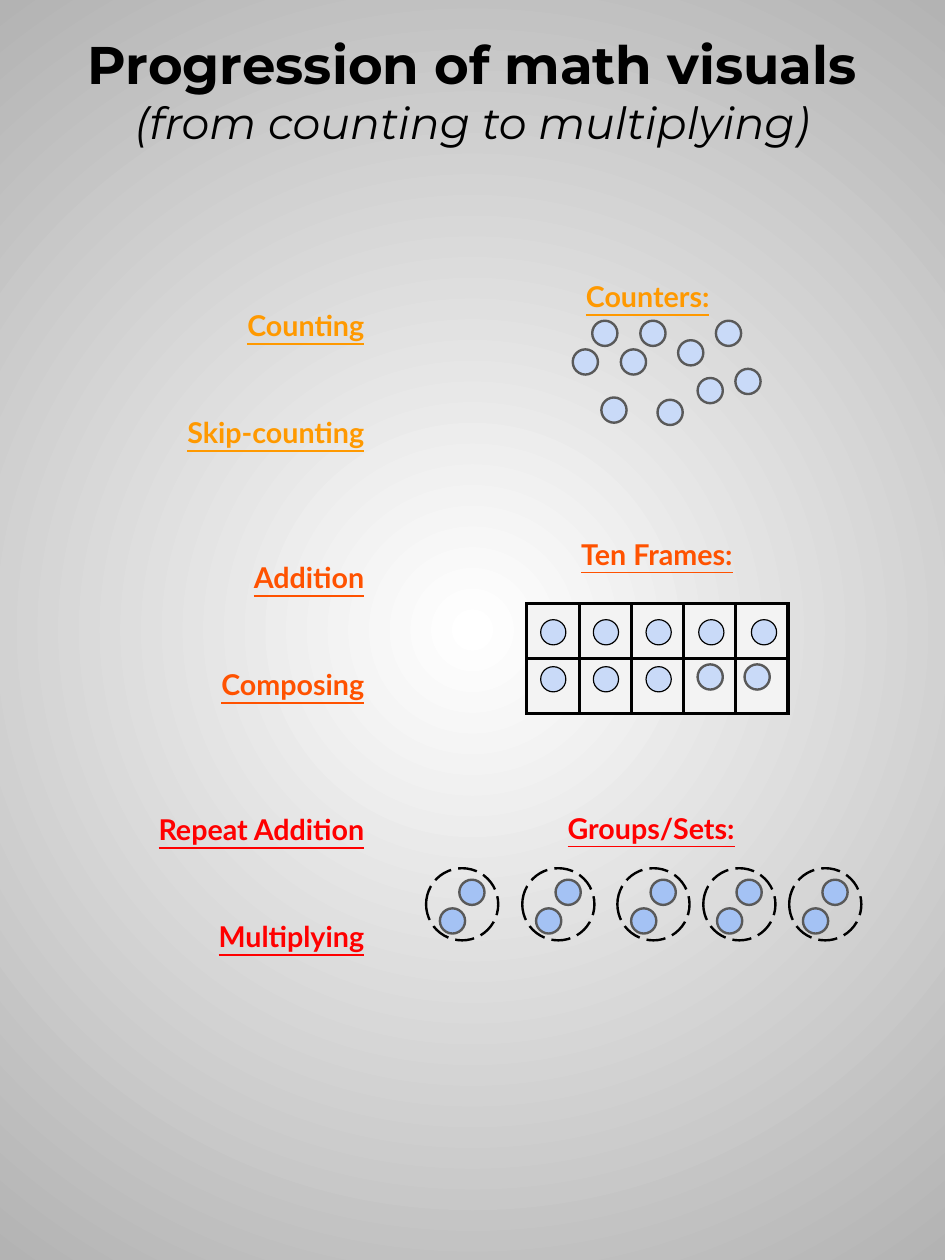
from lxml import etree
from pptx import Presentation
from pptx import util as u
from pptx.dml.color import RGBColor
from pptx.enum import dml, shapes, text
from pptx.oxml import ns

ORANGE, DEEP_ORANGE, RED = "FF9900", "FF5200", "FF0000"
BLACK, GREY, CELL = "000000", "595959", "F3F3F3"
PALE_BLUE, BLUE = "C9DAF8", "A4C2F4"
DOT, RING = 0.22, 0.63


def rgb(hex_string):
    return RGBColor.from_string(hex_string)


class Sheet:
    """Holds the style and the current slide."""
    heading_font, label_font, label_size = "Montserrat", "Lato", 18

    def __init__(self, prs):
        self.s = prs.slides.add_slide(prs.slide_layouts.get_by_name("Comparison"))
        self.bodies = iter([sp for sp in self.s.placeholders
                            if sp.placeholder_format.idx > 0])

    def background(self, inner, outer):
        fill = self.s.background.fill
        fill.gradient()
        for stop, color in zip(fill.gradient_stops, (inner, outer)):
            stop.color.rgb = rgb(color)
        grad = self.s.element.xpath(".//a:gradFill")[0]
        grad.remove(grad.find(ns.qn("a:lin")))
        path = etree.SubElement(grad, ns.qn("a:path"), path="circle")
        etree.SubElement(path, ns.qn("a:fillToRect"),
                         l="50000", t="50000", r="50000", b="50000")

    def frame(self, sp, box, anchor):
        sp.left, sp.top, sp.width, sp.height = map(u.Inches, box)
        tf = sp.text_frame
        tf.word_wrap = True
        tf.auto_size = text.MSO_AUTO_SIZE.NONE
        tf.vertical_anchor = anchor
        tf.margin_left = tf.margin_right = u.Inches(0.1)
        tf.margin_top = tf.margin_bottom = u.Inches(0.1)
        return tf

    def paragraph(self, tf, index, words, align, font, size, color,
                  bold=True, italic=False, underline=False):
        p = tf.paragraphs[0] if index == 0 else tf.add_paragraph()
        p.alignment = align
        p.space_before = p.space_after = u.Pt(0)
        r = p.add_run()
        r.text = words
        r.font.name, r.font.size = font, u.Pt(size)
        r.font.bold, r.font.italic, r.font.underline = bold, italic, underline
        r.font.color.rgb = rgb(color)
        return p

    def title(self, box, lines):
        tf = self.frame(self.s.shapes.title, box, text.MSO_ANCHOR.MIDDLE)
        for i, (words, size, bold) in enumerate(lines):
            self.paragraph(tf, i, words, text.PP_ALIGN.CENTER, self.heading_font,
                           size, BLACK, bold=bold, italic=not bold)

    def body(self, box, items, align, spacing, last_after):
        """Items are (words, color, space before)."""
        tf = self.frame(next(self.bodies), box, text.MSO_ANCHOR.TOP)
        for i, (words, color, before) in enumerate(items):
            p = self.paragraph(tf, i, words, align, self.label_font,
                               self.label_size, color, underline=True)
            p.line_spacing, p.space_before = spacing, u.Pt(before)
            pPr = p._p.get_or_add_pPr()
            pPr.set("marL", "0")
            pPr.set("indent", "0")
            etree.SubElement(pPr, ns.qn("a:buNone"))
        p.space_after = u.Pt(last_after)

    def label(self, box, words, color):
        self.body(box, [(words, color, 0)], text.PP_ALIGN.CENTER, 1.15, 12)

    def group(self):
        return self.s.shapes.add_group_shape()

    def circle(self, x, y, size, fill, line=GREY, width=1.5, dash=None, group=None):
        sp = (group or self.s).shapes.add_shape(
            shapes.MSO_SHAPE.OVAL, *map(u.Inches, (x, y, size, size)))
        sp.shadow.inherit = False
        if fill:
            sp.fill.solid()
            sp.fill.fore_color.rgb = rgb(fill)
        else:
            sp.fill.background()
        sp.line.color.rgb = rgb(line)
        sp.line.width = u.Pt(width)
        if dash:
            sp.line.dash_style = dash

    def grid(self, x, y, cols, rows, col_width, row_height):
        table = self.s.shapes.add_table(
            rows, cols, *map(u.Inches, (x, y, cols * col_width, rows * row_height))).table
        table.first_row = table.horz_banding = False
        for cell in table.iter_cells():
            tcPr = cell._tc.get_or_add_tcPr()
            for side in ("a:lnL", "a:lnR", "a:lnT", "a:lnB"):
                ln = etree.SubElement(tcPr, ns.qn(side), w=str(u.Pt(2.25)))
                solid = etree.SubElement(ln, ns.qn("a:solidFill"))
                etree.SubElement(solid, ns.qn("a:srgbClr"), val=BLACK)
            cell.fill.solid()
            cell.fill.fore_color.rgb = rgb(CELL)


def main():
    prs = Presentation()
    prs.slide_width, prs.slide_height = u.Inches(8.25), u.Inches(11)
    sheet = Sheet(prs)
    sheet.background("FFFFFF", "B3B3B3")

    # Title and list of skills
    sheet.title((0.28, 0.08, 7.69, 1.41), [
        ("Progression of math visuals", 33.3, True),
        ("(from counting to multiplying)", 27.8, False)])
    sheet.body((0.73, 2.29, 2.55, 6.44), [
        ("Counting", ORANGE, 0), ("Skip-counting", ORANGE, 24),
        ("Addition", DEEP_ORANGE, 48), ("Composing", DEEP_ORANGE, 24),
        ("Repeat Addition", RED, 48), ("Multiplying", RED, 24)],
        text.PP_ALIGN.RIGHT, 2.0, 24)

    # Counters: four grouped, the rest loose
    sheet.label((4.67, 2.29, 1.97, 0.44), "Counters:", ORANGE)
    cluster = sheet.group()
    for x, y in [(5, 3.05), (5.42, 3.05), (5.17, 2.8), (5.59, 2.8)]:
        sheet.circle(x, y, DOT, PALE_BLUE, group=cluster)
    for x, y in [(5.25, 3.47), (5.74, 3.49), (5.92, 2.97),
                 (6.09, 3.3), (6.25, 2.8), (6.42, 3.22)]:
        sheet.circle(x, y, DOT, PALE_BLUE)

    # Ten frame: eight grouped dots and two added ones
    sheet.label((4.6, 4.54, 2.27, 0.66), "Ten Frames:", DEEP_ORANGE)
    sheet.grid(4.6, 5.27, cols=5, rows=2, col_width=0.456, row_height=0.48)
    eight = sheet.group()
    for y, count in [(5.41, 5), (5.82, 3)]:
        for col in range(count):
            sheet.circle(4.72 + 0.46 * col, y, DOT, PALE_BLUE, BLACK, 0.75, group=eight)
    for x in (6.09, 6.5):
        sheet.circle(x, 5.8, DOT, PALE_BLUE)

    # Groups of two
    sheet.label((4.55, 6.93, 2.27, 0.66), "Groups/Sets:", RED)
    for x in (3.72, 4.56, 5.39, 6.14, 6.89):
        sheet.circle(x, 7.58, RING, None, BLACK, dash=dml.MSO_LINE.LONG_DASH)
        sheet.circle(x + 0.12, 7.93, DOT, BLUE)
        sheet.circle(x + 0.29, 7.68, DOT, BLUE)

    prs.save("out.pptx")


if __name__ == "__main__":
    main()
